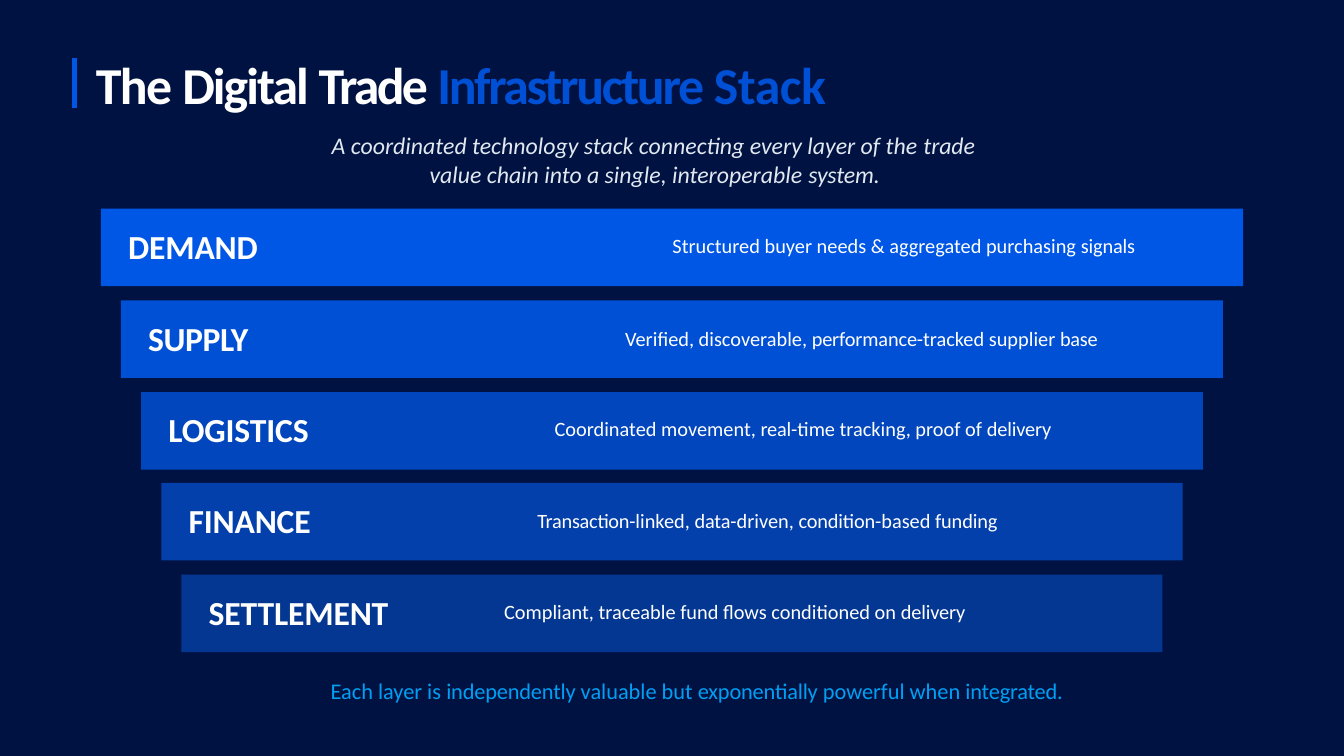
from lxml.etree import SubElement
from pptx import Presentation
from pptx.dml.color import RGBColor
from pptx.enum.shapes import MSO_CONNECTOR, MSO_SHAPE
from pptx.enum.text import MSO_ANCHOR, MSO_AUTO_SIZE, PP_ALIGN
from pptx.oxml.ns import qn
from pptx.util import Pt

PX = 9144  # 100 px to the inch
FONT = "Calibri"
NAVY = RGBColor(0x00, 0x12, 0x42)
WHITE = RGBColor(0xFF, 0xFF, 0xFF)
MIST = RGBColor(0xE1, 0xE8, 0xEF)
SKY = RGBColor(0x00, 0x9F, 0xF4)
ACCENT = RGBColor(0x00, 0x57, 0xE4)
BLUE = RGBColor(0x00, 0x50, 0xD5)

BAR_STEP, BAR_INSET, BAR_HEIGHT = 90.75, 20, 77

# Each text is a list of (words, letter spacing in hundredths of a point).
# Layer: fill, name, name spacing, name width, note left, note drop, note width, note
LAYERS = [
    (RGBColor(0x00, 0x57, 0xE6), "DEMAND", -10, 131, 667, 22, 466,
     [("Structured buyer needs & aggregated purchasing ", 0), ("signals", -10)]),
    (BLUE, "SUPPLY", -30, 103, 620, 24, 478,
     [("Verified, discoverable, ", 0), ("performance-", -10),
      ("tracked supplier ", 0), ("base", -20)]),
    (RGBColor(0x01, 0x46, 0xBD), "LOGISTICS", -10, 142, 550, 22, 502,
     [("Coordinated movement, ", 0), ("real-", -10),
      ("time tracking, proof of ", 0), ("delivery", -10)]),
    (RGBColor(0x03, 0x40, 0xAB), "FINANCE", -10, 124, 533, 23, 469,
     [("Transaction-", -20), ("linked, ", 0), ("data-", -10), ("driven, ", 0),
      ("condition-", -10), ("based ", 0), ("funding", -10)]),
    (RGBColor(0x04, 0x37, 0x92), "SETTLEMENT", -10, 181, 500, 22, 466,
     [("Compliant, traceable fund flows conditioned on ", 0), ("delivery", -10)]),
]


def px(*lengths):
    return [round(length * PX) for length in lengths]


def add_spans(para, spans, size, color, bold=False, italic=False):
    for words, spacing in spans:
        span = para.add_run()
        span.text = words
        span.font.name, span.font.size = FONT, Pt(size)
        span.font.bold, span.font.italic = bold, italic
        span.font.color.rgb = color
        span._r.get_or_add_rPr().set("spc", str(spacing))


def prepare_frame(shape, inset=1):
    frame = shape.text_frame
    frame.word_wrap = True
    frame.auto_size = MSO_AUTO_SIZE.NONE
    frame.vertical_anchor = MSO_ANCHOR.TOP
    frame.margin_left = frame.margin_right = frame.margin_bottom = 0
    frame.margin_top = inset * PX
    para = frame.paragraphs[0]
    para.alignment = PP_ALIGN.LEFT
    return para


def add_text(slide, box, spans, size, color, inset=1, **style):
    para = prepare_frame(slide.shapes.add_textbox(*px(*box)), inset)
    add_spans(para, spans, size, color, **style)
    return para


def set_indent(para, left, first):
    properties = para._p.get_or_add_pPr()
    properties.set("marL", str(left * PX))
    properties.set("indent", str(first * PX))


def add_heading(slide, box):
    left, top, width, height = box
    # Accent rule beside the title
    rule = slide.shapes.add_connector(
        MSO_CONNECTOR.STRAIGHT, *px(left - 9, top + 10, left - 9, top + 59))
    rule.line.color.rgb, rule.line.width = ACCENT, Pt(3)
    SubElement(rule._element.spPr, qn("a:effectLst"))
    # Two-colour title
    title = slide.shapes.title
    title.left, title.top, title.width, title.height = px(*box)
    para = prepare_frame(title, inset=4)
    set_indent(para, 12, 0)
    add_spans(para, [("The ", -110), ("Digital ", -140), ("Trade ", -180)],
              37, WHITE, bold=True)
    add_spans(para, [("Infrastructure ", -160), ("Stack", -30)],
              37, BLUE, bold=True)


def add_subtitle(slide, box):
    spans = [("A coordinated technology stack connecting every layer of the ", 0),
             ("trade ", -10), ("value chain into a single, interoperable ", 0),
             ("system.", -10)]
    para = add_text(slide, box, spans, 17, MIST, inset=2, italic=True)
    para.line_spacing = 1.02
    set_indent(para, 98, -97)


def add_layer(slide, box, layer):
    fill, name, spacing, name_width, note_left, note_drop, note_width, note = layer
    left, top, width, height = box
    bar = slide.shapes.add_shape(MSO_SHAPE.RECTANGLE, *px(*box))
    bar.shadow.inherit = False
    bar.fill.solid()
    bar.fill.fore_color.rgb = fill
    bar.line.fill.background()
    add_text(slide, (left + 27, top + 16, name_width, 43), [(name, spacing)],
             24, WHITE, bold=True)
    add_text(slide, (note_left, top + note_drop, note_width, 27), note,
             14.5, WHITE, inset=2)


def add_stack(slide, box):
    left, top, width = box
    for index, layer in enumerate(LAYERS):
        inset = index * BAR_INSET
        bar_box = (left + inset, top + round(index * BAR_STEP),
                   width - 2 * inset, BAR_HEIGHT)
        add_layer(slide, bar_box, layer)


def add_closing(slide, box):
    spans = [("Each layer is ", 0), ("independently ", -10), ("valuable but ", 0),
             ("exponentially ", -10), ("powerful when ", 0), ("integrated.", -10)]
    set_indent(add_text(slide, box, spans, 16, SKY, inset=2), 1, 0)


def main():
    deck = Presentation()
    deck.slide_width, deck.slide_height = px(1333, 750)
    page = deck.slides.add_slide(deck.slide_layouts[5])
    page.background.fill.solid()
    page.background.fill.fore_color.rgb = NAVY
    add_heading(page, (83, 48, 1166, 65))
    add_subtitle(page, (328, 127, 651, 60))
    add_stack(page, (100, 207, 1133))
    add_closing(page, (327, 670, 736, 29))
    deck.save("out.pptx")


if __name__ == "__main__":
    main()
